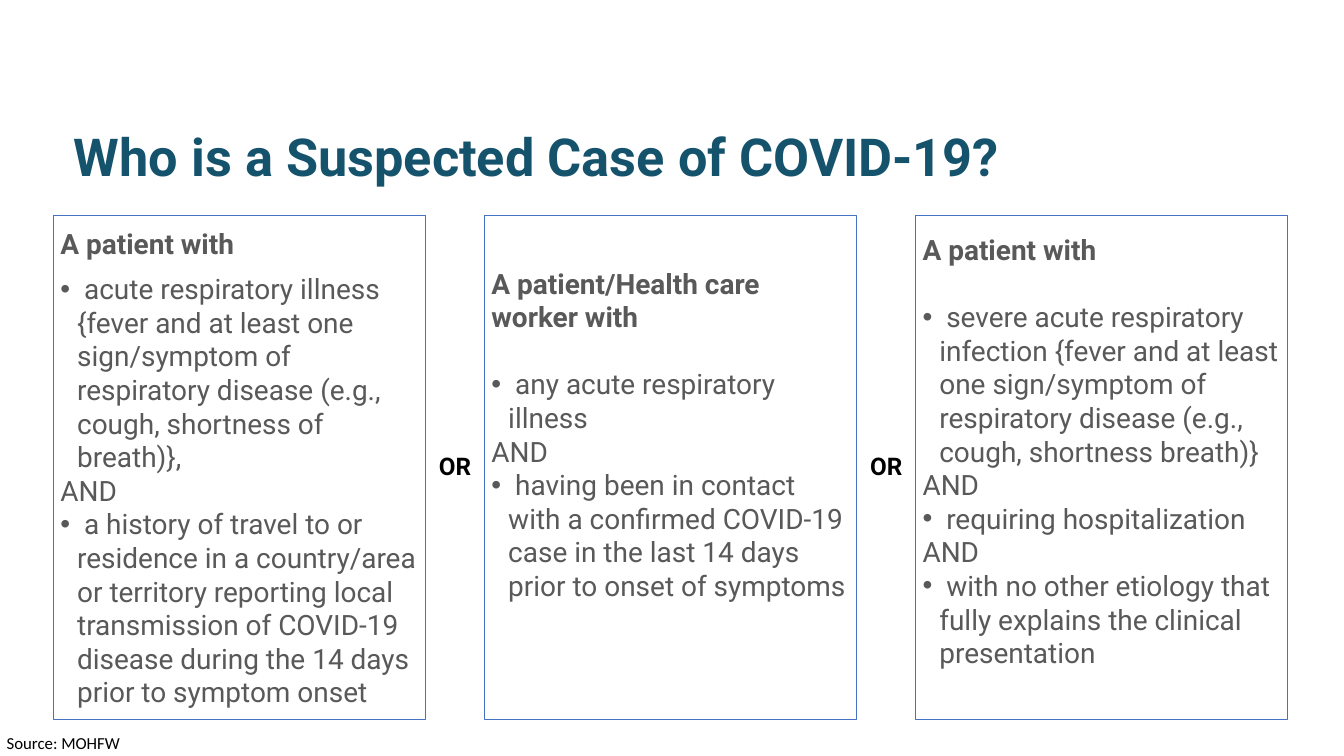
from dataclasses import dataclass

from lxml.etree import SubElement
from pptx import Presentation
from pptx.dml.color import RGBColor as RGB
from pptx.enum.shapes import MSO_SHAPE as SHAPE
from pptx.enum.text import MSO_ANCHOR as ANCHOR, MSO_AUTO_SIZE as FIT, PP_ALIGN as ALIGN
from pptx.oxml.ns import qn
from pptx.util import Inches, Pt


@dataclass(frozen=True)
class Theme:
    font: str = "Roboto"
    source_font: str = "Calibri"
    title: RGB = RGB(0x15, 0x52, 0x6C)
    body: RGB = RGB(0x59, 0x59, 0x59)
    dark: RGB = RGB(0, 0, 0)
    border: RGB = RGB(0x44, 0x72, 0xC4)
    title_size: int = 56
    body_size: int = 30
    or_size: int = 26
    source_size: int = 18


T = Theme()


def add_run(p, text, size, color, bold=False, font=T.font):
    r = p.add_run()
    r.text = text
    r.font.name = font
    r.font.size = Pt(size)
    r.font.bold = bold
    r.font.color.rgb = color


def add_label(s, left, top, width, height):
    tf = s.shapes.add_textbox(Inches(left), Inches(top), Inches(width), Inches(height)).text_frame
    tf.word_wrap = True
    return tf.paragraphs[0]


W, H = 20, 11.25
LEFT, TOP = 0.8, 3.21
COL_W, COL_H, GAP = 5.53, 7.5, 0.885
OR_W, OR_TOP = 0.83, 6.66
HANG = Inches(0.25)

prs = Presentation()
prs.slide_width, prs.slide_height = Inches(W), Inches(H)
s = prs.slides.add_slide(prs.slide_layouts[5])

title = s.shapes.title
title.left, title.top = Inches(W * 0.05), Inches(0.68)
title.width, title.height = Inches(17.25), Inches(2.17)
tf = title.text_frame
tf.word_wrap = True
tf.auto_size = FIT.NONE
tf.vertical_anchor = ANCHOR.BOTTOM
p = tf.paragraphs[0]
p.alignment = ALIGN.LEFT
p.line_spacing = 0.9
add_run(p, "Who is a Suspected Case of COVID-19?", T.title_size, T.title, True)

# heading, space below heading in points, bottom inset in inches, criteria
columns = [
    ("A patient with", 12, 0.05, [
        " acute respiratory illness {fever and at least one sign/symptom of respiratory "
        "disease (e.g., cough, shortness of breath)},",
        " a history of travel to or residence in a country/area or territory reporting local "
        "transmission of COVID-19 disease during the 14 days prior to symptom onset",
    ]),
    ("A patient/Health care worker with", 36, 1.05, [
        " any acute respiratory illness",
        " having been in contact with a confirmed COVID-19 case in the last 14 days "
        "prior to onset of symptoms",
    ]),
    ("A patient with", 36, 0.55, [
        " severe acute respiratory infection {fever and at least one sign/symptom of "
        "respiratory disease (e.g., cough, shortness breath)}",
        " requiring hospitalization",
        " with no other etiology that fully explains the clinical presentation",
    ]),
]

for i, (heading, space, inset, criteria) in enumerate(columns):
    left = LEFT + i * (COL_W + GAP)
    sp = s.shapes.add_shape(SHAPE.RECTANGLE, Inches(left), Inches(TOP), Inches(COL_W), Inches(COL_H))
    sp.shadow.inherit = False
    sp.fill.background()
    sp.line.color.rgb = T.border
    sp.line.width = Pt(1)
    tf = sp.text_frame
    tf.word_wrap = True
    tf.vertical_anchor = ANCHOR.MIDDLE
    tf.margin_bottom = Inches(inset)
    p = tf.paragraphs[0]
    p.alignment = ALIGN.LEFT
    add_run(p, heading, T.body_size, T.body, True)

    for j, criterion in enumerate(criteria):
        if j:
            p = tf.add_paragraph()
            p.alignment = ALIGN.LEFT
            add_run(p, "AND", T.body_size, T.body)
        p = tf.add_paragraph()
        p.alignment = ALIGN.LEFT
        if not j:
            p.space_before = Pt(space)
        pPr = p._p.get_or_add_pPr()
        pPr.set("marL", str(HANG))
        pPr.set("indent", str(-HANG))
        SubElement(pPr, qn("a:buFont"), typeface="Arial")
        SubElement(pPr, qn("a:buChar"), char="•")
        add_run(p, criterion, T.body_size, T.body)

for i in range(len(columns) - 1):
    center = LEFT + (i + 1) * (COL_W + GAP) - GAP / 2
    p = add_label(s, center - OR_W / 2, OR_TOP, OR_W, 0.54)
    p.alignment = ALIGN.CENTER
    add_run(p, "OR", T.or_size, T.dark, True)

p = add_label(s, 0, H - 0.4, 4.13, 0.4)
add_run(p, "Source: MOHFW", T.source_size, T.dark, font=T.source_font)

prs.save("out.pptx")
